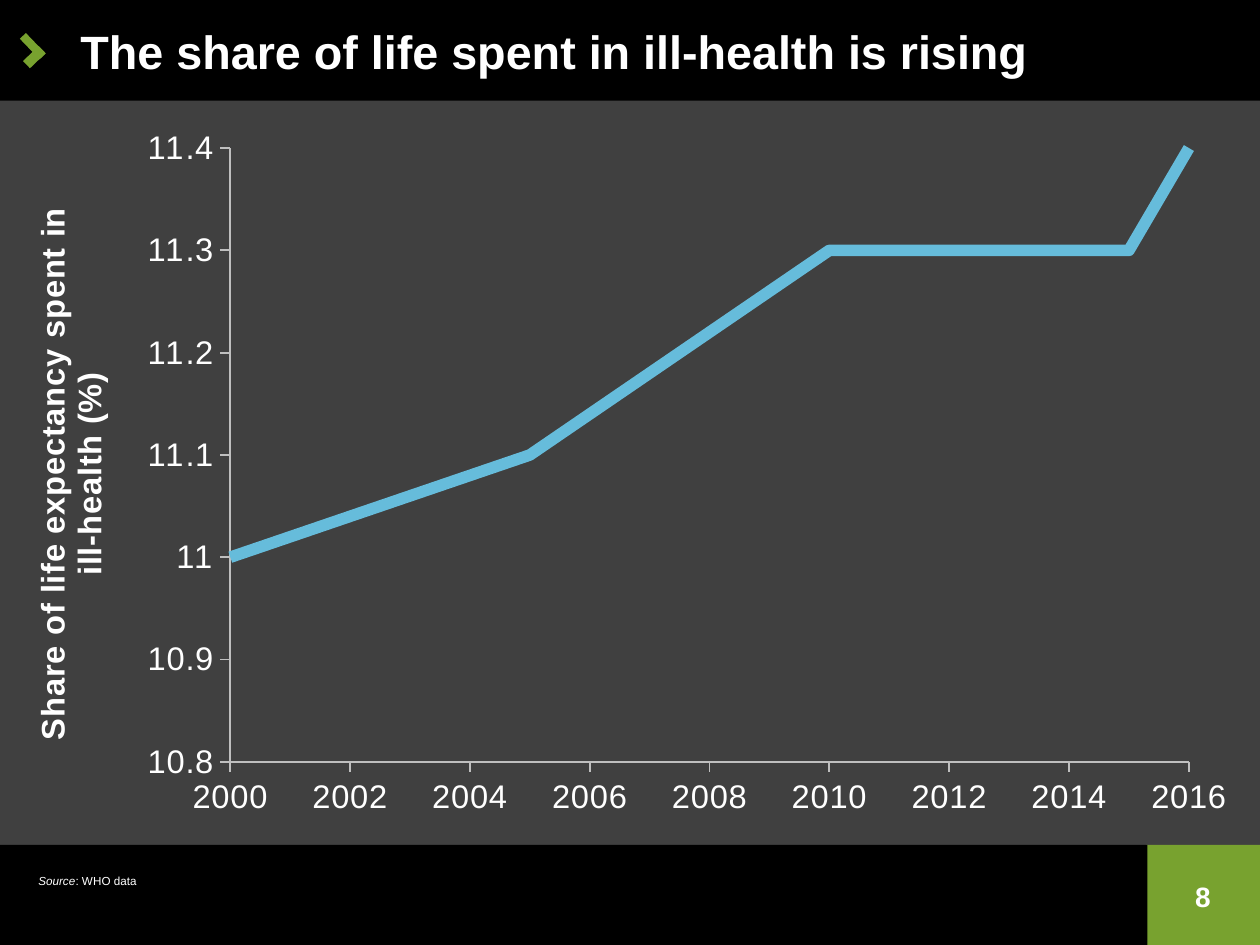
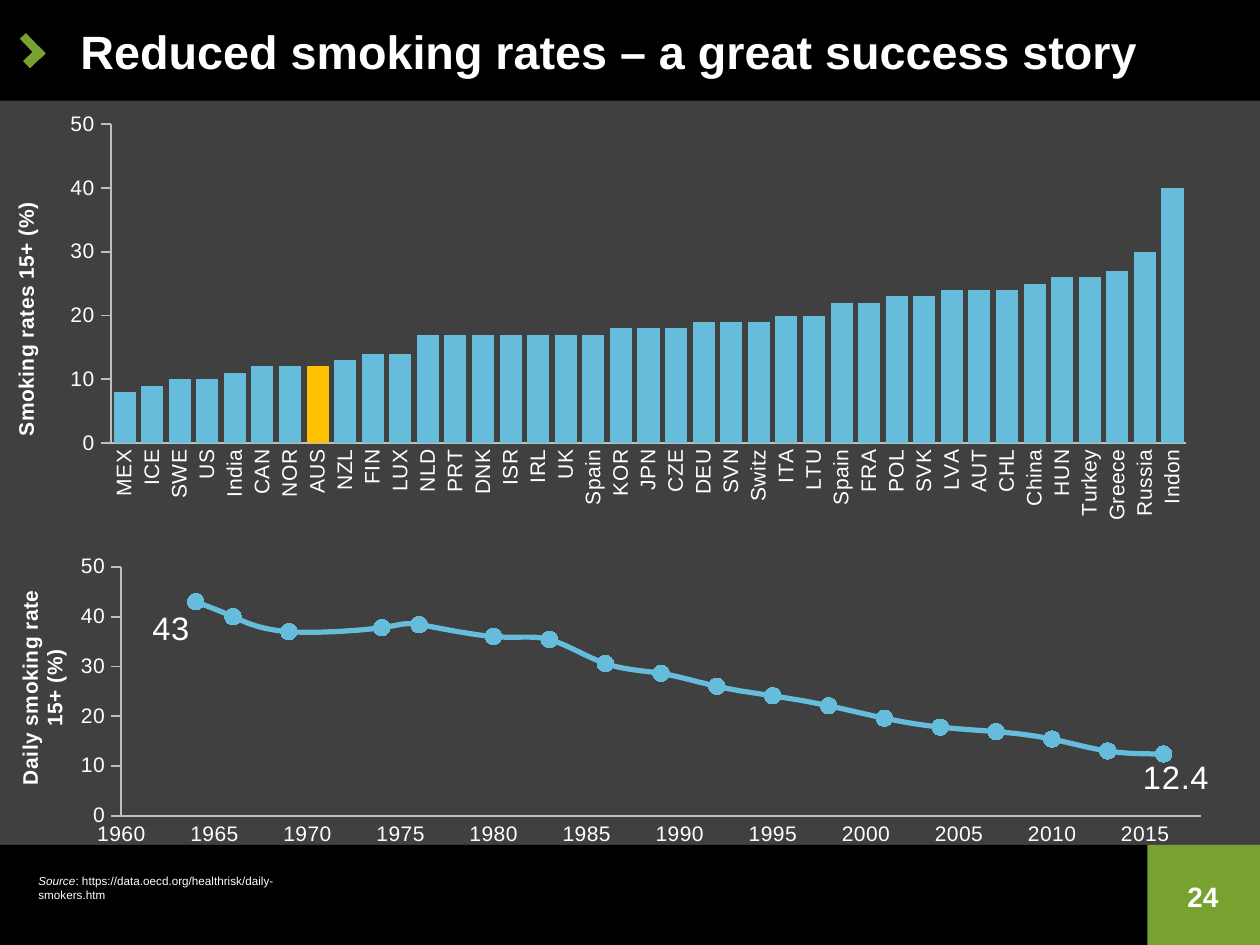
from lxml.etree import SubElement
from pptx import Presentation
from pptx.chart.data import CategoryChartData, XyChartData
from pptx.dml.color import RGBColor
from pptx.enum.chart import XL_CHART_TYPE, XL_LABEL_POSITION, XL_MARKER_STYLE, XL_TICK_MARK
from pptx.enum.shapes import MSO_SHAPE
from pptx.enum.text import MSO_ANCHOR, PP_ALIGN
from pptx.oxml.ns import qn
from pptx.util import Inches, Pt

BACKGROUND = RGBColor(0x40, 0x40, 0x40)
BLACK = RGBColor(0, 0, 0)
WHITE = RGBColor(0xFF, 0xFF, 0xFF)
GREEN = RGBColor(0x78, 0xA2, 0x2F)
BLUE = RGBColor(0x66, 0xBC, 0xDB)
AMBER = RGBColor(0xFF, 0xC0, 0x00)
AXIS_GREY = RGBColor(0xBF, 0xBF, 0xBF)
FONT = "Arial"

FRAME_PARTS = [
    (6.82, 5.03, 0.69, 0.6, 0, GREEN),
    (0, 0, 7.5, 0.6, 0, BLACK),
    (0, 5.03, 6.83, 0.6, 0, BLACK),
    (0.14, 0.31, 0.13, 0.06, 316.1, GREEN),
    (0.11, 0.25, 0.17, 0.05, 46.1, GREEN),
]

ILL_HEALTH_SHARE = [(2000, 11), (2005, 11.1), (2010, 11.3), (2015, 11.3), (2016, 11.4)]

DAILY_SMOKING = [
    (1964, 43), (1966, 40), (1969, 37), (1974, 37.8), (1976, 38.4), (1980, 36),
    (1983, 35.4), (1986, 30.6), (1989, 28.6), (1992, 26), (1995, 24.1), (1998, 22.1),
    (2001, 19.6), (2004, 17.8), (2007, 16.9), (2010, 15.4), (2013, 13), (2016, 12.4),
]

COUNTRY_SMOKING = [
    ("MEX", 8), ("ICE", 9), ("SWE", 10), ("US", 10), ("India", 11),
    ("CAN", 12), ("NOR", 12), ("AUS", 12), ("NZL", 13), ("FIN", 14),
    ("LUX", 14), ("NLD", 17), ("PRT", 17), ("DNK", 17), ("ISR", 17),
    ("IRL", 17), ("UK", 17), ("Spain", 17), ("KOR", 18), ("JPN", 18),
    ("CZE", 18), ("DEU", 19), ("SVN", 19), ("Switz", 19), ("ITA", 20),
    ("LTU", 20), ("Spain", 22), ("FRA", 22), ("POL", 23), ("SVK", 23),
    ("LVA", 24), ("AUT", 24), ("CHL", 24), ("China", 25), ("HUN", 26),
    ("Turkey", 26), ("Greece", 27), ("Russia", 30), ("Indon", 40),
]


def add_block(slide, left, top, width, height, rotation, color):
    block = slide.shapes.add_shape(
        MSO_SHAPE.RECTANGLE, Inches(left), Inches(top), Inches(width), Inches(height))
    block.rotation = rotation
    block.shadow.inherit = False
    block.fill.solid()
    block.fill.fore_color.rgb = color
    block.line.fill.background()


def add_text(slide, box, texts, size, bold=False, anchor=MSO_ANCHOR.MIDDLE, alignment=PP_ALIGN.LEFT):
    text_frame = slide.shapes.add_textbox(*map(Inches, box)).text_frame
    text_frame.word_wrap = True
    text_frame.vertical_anchor = anchor
    paragraph = text_frame.paragraphs[0]
    paragraph.alignment = alignment
    for text in texts:
        run = paragraph.add_run()
        run.text = text
        run.font.name = FONT
        run.font.size = Pt(size)
        run.font.bold = bold
        run.font.color.rgb = WHITE
    return paragraph


def add_framed_slide(presentation, title, number, source):
    slide = presentation.slides.add_slide(presentation.slide_layouts[6])
    for part in FRAME_PARTS:
        add_block(slide, *part)
    add_text(slide, (0.38, 0, 7.12, 0.6), [title], 20, bold=True)
    add_text(slide, (6.82, 5.08, 0.68, 0.51), [number], 12, bold=True, alignment=PP_ALIGN.CENTER)
    source_line = add_text(
        slide, (0.13, 5.15, 2, 0.19), ["Source", ": " + source], 5, anchor=MSO_ANCHOR.TOP)
    source_line.runs[0].font.italic = True
    return slide


def set_layout(parent, index, **values):
    layout = parent.find(qn("c:layout"))
    if layout is None:
        layout = parent.makeelement(qn("c:layout"))
        parent.insert(index, layout)
    for child in list(layout):
        layout.remove(child)
    manual = SubElement(layout, qn("c:manualLayout"))
    for name, value in values.items():
        SubElement(manual, qn("c:" + name)).set("val", str(value))


def style_axis(axis, tick_mark, minimum=None, maximum=None, major=None):
    axis.has_major_gridlines = False
    axis.major_tick_mark = tick_mark
    axis.minor_tick_mark = XL_TICK_MARK.NONE
    axis.format.line.color.rgb = AXIS_GREY
    axis.format.line.width = Pt(0.75)
    if major:
        axis.minimum_scale = minimum
        axis.maximum_scale = maximum
        axis.major_unit = major


def add_styled_chart(slide, kind, box, data, size, axis_title, title_place, plot_place, scale):
    chart = slide.shapes.add_chart(kind, *map(Inches, box), data).chart
    chart.has_legend = False
    chart.has_title = False
    chart.font.name = FONT
    chart.font.size = Pt(size)
    chart.font.color.rgb = WHITE
    chart.plots[0].vary_by_categories = False
    style_axis(chart.value_axis, XL_TICK_MARK.OUTSIDE, *scale)
    text_frame = chart.value_axis.axis_title.text_frame
    text_frame.text = axis_title
    font = text_frame.paragraphs[0].runs[0].font
    font.name = FONT
    font.size = Pt(size)
    font.bold = True
    font.color.rgb = WHITE
    for properties in chart.element.iter(qn("a:defRPr"), qn("a:rPr")):
        properties.set("spc", "20")
    title = chart.element.xpath(".//c:valAx/c:title")[0]
    set_layout(title, 1, xMode="edge", yMode="edge", **dict(zip("xy", title_place)))
    plot_area = chart.element.xpath(".//c:plotArea")[0]
    set_layout(plot_area, 0, layoutTarget="inner", xMode="edge", yMode="edge",
               **dict(zip("xywh", plot_place)))
    return chart


def xy_data(points):
    data = XyChartData()
    series = data.add_series("Series 1")
    for x, y in points:
        series.add_data_point(x, y)
    return data


def style_line(chart, width, smooth):
    series = chart.plots[0].series[0]
    series.format.line.color.rgb = BLUE
    series.format.line.width = Pt(width)
    for element in chart.element.xpath(".//c:ser/c:smooth"):
        element.set("val", str(int(smooth)))
    return series


def add_ill_health_chart(slide):
    chart = add_styled_chart(
        slide, XL_CHART_TYPE.XY_SCATTER_LINES_NO_MARKERS, (0, 0.69, 7.45, 4.25),
        xy_data(ILL_HEALTH_SHARE), 14, "Share of life expectancy spent in ill-health (%)",
        (0.02, 0.12), (0.184, 0.045, 0.766, 0.86), (10.8, 11.4, 0.1))
    style_axis(chart.category_axis, XL_TICK_MARK.OUTSIDE, 2000, 2016, 2)
    style_line(chart, 5, smooth=False)


def add_daily_smoking_chart(slide):
    chart = add_styled_chart(
        slide, XL_CHART_TYPE.XY_SCATTER_SMOOTH, (0, 3.29, 7.37, 1.75),
        xy_data(DAILY_SMOKING), 9, "Daily smoking rate 15+ (%)",
        (0.01, 0.12), (0.098, 0.049, 0.872, 0.853), (0, 50, 10))
    style_axis(chart.category_axis, XL_TICK_MARK.NONE, 1960, 2018, 5)
    series = style_line(chart, 2.25, smooth=True)
    series.marker.style = XL_MARKER_STYLE.CIRCLE
    series.marker.size = 7
    series.marker.format.fill.solid()
    series.marker.format.fill.fore_color.rgb = BLUE
    series.marker.format.line.color.rgb = BLUE
    for index in (0, len(DAILY_SMOKING) - 1):
        label = series.points[index].data_label
        label.font.name = FONT
        label.font.size = Pt(14)
        label.font.color.rgb = WHITE
        label.position = XL_LABEL_POSITION.BELOW
    for show_value in chart.element.xpath(".//c:ser/c:dLbls/c:showVal"):
        show_value.set("val", "0")
    offsets = [(-0.02, -0.02), (0.01, -0.03)]
    for label, (x, y) in zip(chart.element.xpath(".//c:dLbl"), offsets):
        set_layout(label, 1, x=x, y=y)


def add_country_chart(slide):
    data = CategoryChartData()
    data.categories = [country for country, _ in COUNTRY_SMOKING]
    data.add_series("Series 1", [rate for _, rate in COUNTRY_SMOKING])
    chart = add_styled_chart(
        slide, XL_CHART_TYPE.COLUMN_CLUSTERED, (0.05, 0.6, 7.17, 2.65), data, 9,
        "Smoking rates 15+ (%)", (0, 0.22), (0.085, 0.053, 0.893, 0.716), (0, 50, 10))
    style_axis(chart.category_axis, XL_TICK_MARK.NONE)
    label_font = chart.category_axis.tick_labels.font
    label_font.name = FONT
    label_font.size = Pt(9)
    label_font.color.rgb = WHITE
    chart.element.xpath(".//c:catAx/c:txPr/a:bodyPr")[0].set("rot", "-5400000")
    plot = chart.plots[0]
    plot.gap_width = 25
    series = plot.series[0]
    australia = series.points[list(plot.categories).index("AUS")]
    for item, color in ((series, BLUE), (australia, AMBER)):
        item.format.fill.solid()
        item.format.fill.fore_color.rgb = color


def main():
    presentation = Presentation()
    presentation.slide_width = Inches(7.5)
    presentation.slide_height = presentation.slide_width * 3 // 4
    background = presentation.slide_master.background.fill
    background.solid()
    background.fore_color.rgb = BACKGROUND

    slide = add_framed_slide(
        presentation, "The share of life spent in ill-health is rising", "8", "WHO data")
    add_ill_health_chart(slide)

    slide = add_framed_slide(
        presentation, "Reduced smoking rates – a great success story", "24",
        "https://data.oecd.org/healthrisk/daily-smokers.htm")
    add_daily_smoking_chart(slide)
    add_country_chart(slide)

    presentation.save("out.pptx")


if __name__ == "__main__":
    main()
